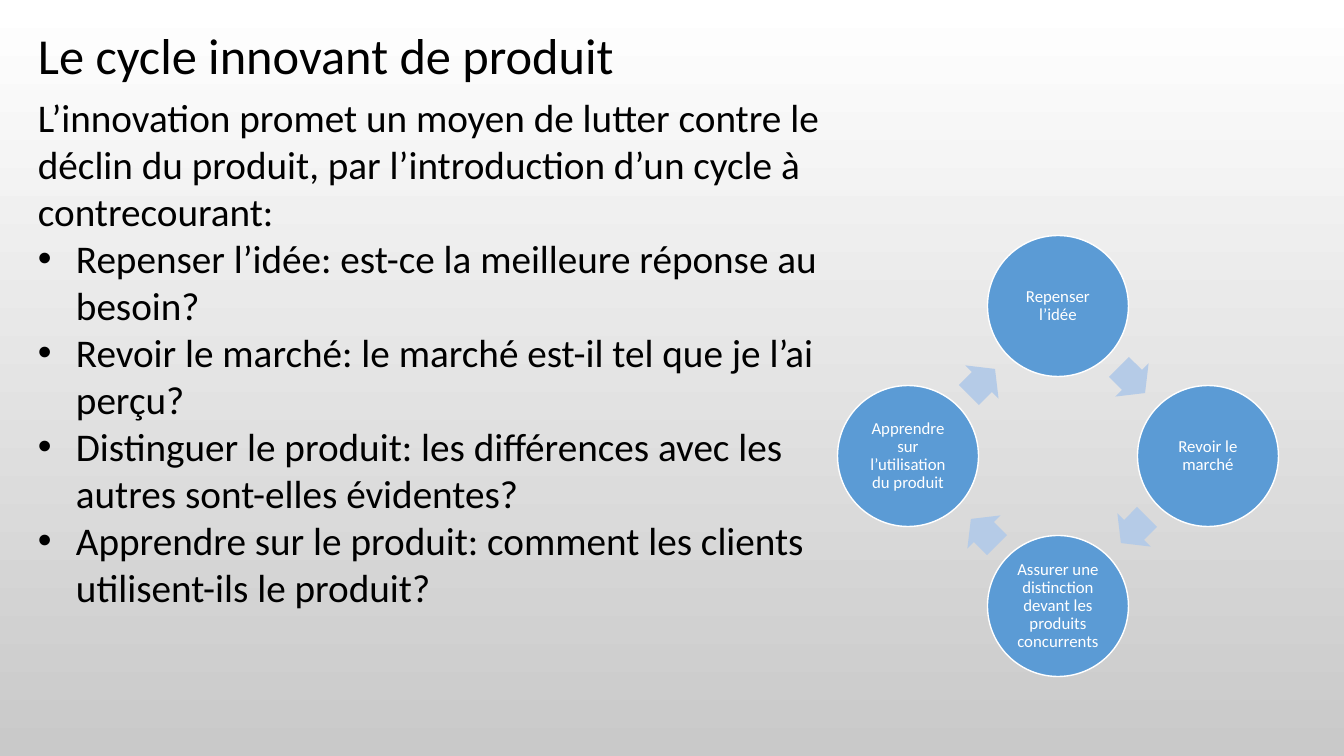
from lxml import etree
from pptx import Presentation
from pptx.dml.color import RGBColor
from pptx.enum.shapes import MSO_SHAPE
from pptx.enum.text import MSO_ANCHOR, MSO_AUTO_SIZE, PP_ALIGN
from pptx.oxml.ns import qn
from pptx.util import Pt

PX = 914400 / 100.8
FONT = "Calibri"
BLACK = RGBColor(0x00, 0x00, 0x00)
WHITE = RGBColor(0xFF, 0xFF, 0xFF)
GREY = RGBColor(0xC9, 0xC9, 0xC9)
BLUE = RGBColor(0x5B, 0x9B, 0xD5)
PALE_BLUE = RGBColor(0xB5, 0xCB, 0xE7)
ELLIPSE = MSO_SHAPE.OVAL
RIGHT_ARROW = MSO_SHAPE.RIGHT_ARROW
MIDDLE = MSO_ANCHOR.MIDDLE
CENTER = PP_ALIGN.CENTER
GROW = MSO_AUTO_SIZE.SHAPE_TO_FIT_TEXT


def px(*lengths):
    """Turn pixel lengths into EMU."""
    return [round(length * PX) for length in lengths]


def add_run(paragraph, text, size, color):
    run = paragraph.add_run()
    run.text = text
    run.font.name = FONT
    run.font.size = Pt(size)
    run.font.color.rgb = color


presentation = Presentation()
presentation.slide_width, presentation.slide_height = px(1344, 756)
slide = presentation.slides.add_slide(presentation.slide_layouts[6])

background = slide.background.fill
background.gradient()
background.gradient_angle = 270
for stop, color in zip(background.gradient_stops, (WHITE, GREY)):
    stop.color.rgb = color

# Title and body text
title = "Le cycle innovant de produit"
introduction = (
    "L’innovation promet un moyen de lutter contre le déclin du produit, "
    "par l’introduction d’un cycle à contrecourant:"
)
questions = [
    "Repenser l’idée: est-ce la meilleure réponse au besoin?",
    "Revoir le marché: le marché est-il tel que je l’ai perçu?",
    "Distinguer le produit: les différences avec les autres sont-elles évidentes?",
    "Apprendre sur le produit: comment les clients utilisent-ils le produit?",
]
text_boxes = [
    ((28, 88, 849, 532), 28, introduction, questions),
    ((28, 19, 967, 72), 36, title, []),
]
for bounds, size, opening, bullets in text_boxes:
    text_frame = slide.shapes.add_textbox(*px(*bounds)).text_frame
    text_frame.word_wrap = True
    text_frame.auto_size = GROW
    add_run(text_frame.paragraphs[0], opening, size, BLACK)
    indent, = px(38)
    for bullet in bullets:
        paragraph = text_frame.add_paragraph()
        properties = paragraph._p.get_or_add_pPr()
        properties.set("marL", str(indent))
        properties.set("indent", str(-indent))
        etree.SubElement(properties, qn("a:buFont"), typeface="Arial")
        etree.SubElement(properties, qn("a:buChar"), char="•")
        add_run(paragraph, bullet, size, BLACK)

# Cycle: each step is a quarter turn clockwise from the one before
steps = [
    "Repenser l’idée",
    "Revoir le marché",
    "Assurer une distinction devant les produits concurrents",
    "Apprendre sur l’utilisation du produit",
]
CENTER_X, CENTER_Y = 1058, 456
DIAMETER = 141
ARROW_WIDTH, ARROW_HEIGHT = 37, 47
circle_x, circle_y = 0, -150
arrow_x, arrow_y = 74, -76
for index, step in enumerate(steps):
    circle = slide.shapes.add_shape(ELLIPSE, *px(
        CENTER_X + circle_x - DIAMETER / 2, CENTER_Y + circle_y - DIAMETER / 2,
        DIAMETER, DIAMETER))
    circle.shadow.inherit = False
    circle.fill.solid()
    circle.fill.fore_color.rgb = BLUE
    circle.line.color.rgb = WHITE
    circle.line.width = Pt(1)
    text_frame = circle.text_frame
    text_frame.word_wrap = True
    text_frame.vertical_anchor = MIDDLE
    (text_frame.margin_left, text_frame.margin_top,
     text_frame.margin_right, text_frame.margin_bottom) = px(2, 2, 2, 2)
    paragraph = text_frame.paragraphs[0]
    paragraph.alignment = CENTER
    paragraph.line_spacing = 0.9
    add_run(paragraph, step, 12, WHITE)

    arrow = slide.shapes.add_shape(RIGHT_ARROW, *px(
        CENTER_X + arrow_x - ARROW_WIDTH / 2, CENTER_Y + arrow_y - ARROW_HEIGHT / 2,
        ARROW_WIDTH, ARROW_HEIGHT))
    arrow.shadow.inherit = False
    arrow.adjustments[0] = 0.6
    arrow.adjustments[1] = 0.5
    arrow.rotation = 45 + 90 * index
    arrow.fill.solid()
    arrow.fill.fore_color.rgb = PALE_BLUE
    arrow.line.fill.background()

    circle_x, circle_y = -circle_y, circle_x
    arrow_x, arrow_y = -arrow_y, arrow_x

presentation.save("out.pptx")
